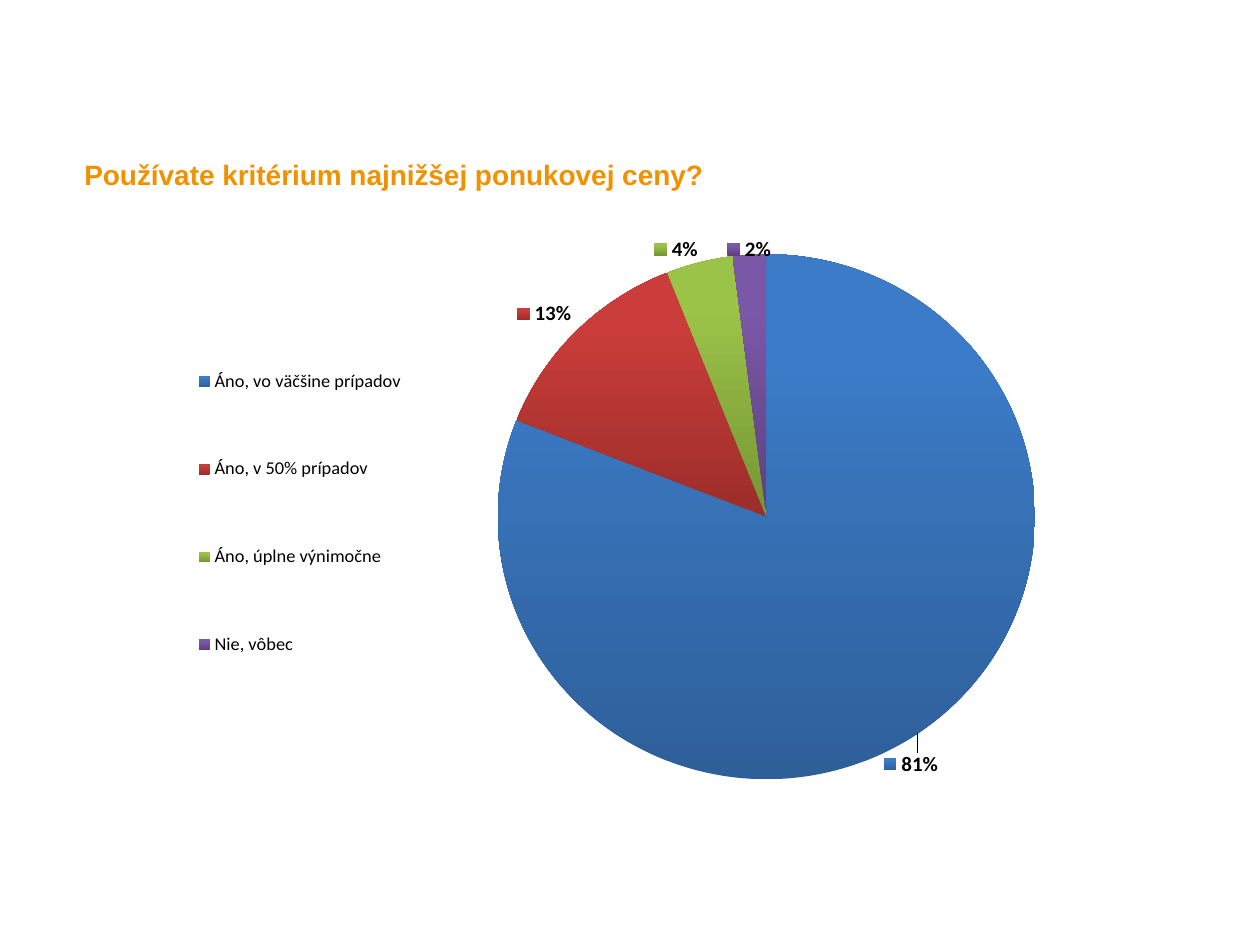
"""Build a slide with a pie chart on the use of the lowest-price criterion."""
from lxml import etree
from pptx import Presentation
from pptx.chart.data import CategoryChartData
from pptx.dml.color import RGBColor
from pptx.enum import chart as c, text
from pptx.oxml.ns import qn
from pptx.util import Inches, Pt

TITLE = "Používate kritérium najnižšej ponukovej ceny?"
ANSWERS = [
    ("Áno, vo väčšine prípadov", 81, "blue"),
    ("Áno, v 50% prípadov", 13, "red"),
    ("Áno, úplne výnimočne", 4, "green"),
    ("Nie, vôbec", 2, "purple"),
]
COLORS = {"title": "F09100", "text": "000000"}
GRADIENTS = {
    "blue": ("2E5F99", "3C7BC7"),
    "red": ("9B2D2A", "CB3D3A"),
    "green": ("769535", "9BC348"),
    "purple": ("5D417E", "7B57A8"),
}
PLOT_AREA = {"x": 0.42, "y": 0.013, "w": 0.57, "h": 0.886}
LEGEND_AREA = {"x": 0.07, "y": 0.11, "w": 0.28, "h": 0.68}
MAIN_LABEL_SHIFT = {"x": -0.04, "y": 0.02}


def set_layout(parent, after, area, modes=()):
    """Give a chart part a manual layout, placed after the named child if any."""
    for old in parent.findall(qn("c:layout")):
        parent.remove(old)
    layout = etree.Element(qn("c:layout"))
    manual = etree.SubElement(layout, qn("c:manualLayout"))
    for tag, val in [*modes, *area.items()]:
        etree.SubElement(manual, qn(f"c:{tag}")).set("val", str(val))
    parent.insert(0 if after is None else parent.index(parent.find(qn(after))) + 1, layout)


def add_title(s):
    """Add the question, resting on the bottom of its box."""
    tf = s.shapes.add_textbox(Inches(0.67), Inches(0.98), Inches(8.86), Inches(0.54)).text_frame
    tf.word_wrap = True
    tf.vertical_anchor = text.MSO_ANCHOR.BOTTOM
    tf.margin_left = tf.margin_right = tf.margin_top = tf.margin_bottom = 0
    p = tf.paragraphs[0]
    p.text = TITLE
    p.font.name, p.font.size, p.font.bold = "Arial", Pt(16), True
    p.font.color.rgb = RGBColor.from_string(COLORS["title"])


def add_labels(series):
    """Label each slice with its percentage and shift the label of the main slice."""
    labels = series.data_labels
    labels.show_value = False
    labels.show_percentage = True
    labels.show_legend_key = True
    labels.number_format, labels.number_format_is_linked = "0%", False
    labels.position = c.XL_LABEL_POSITION.OUTSIDE_END

    main_label = series.points[0].data_label
    main_label.position = c.XL_LABEL_POSITION.OUTSIDE_END
    for font in (labels.font, main_label.font):
        font.size, font.bold = Pt(12), True
    label_xml = labels._element.find(qn("c:dLbl"))
    for tag, val in (("showLegendKey", "1"), ("showVal", "0"), ("showPercent", "1")):
        label_xml.find(qn(f"c:{tag}")).set("val", val)
    set_layout(label_xml, "c:idx", MAIN_LABEL_SHIFT)


def add_pie(s):
    """Add the pie with its legend and percentage labels."""
    data = CategoryChartData()
    data.categories = [name for name, _, _ in ANSWERS]
    data.add_series("Series 1", [value for _, value, _ in ANSWERS])
    chart = s.shapes.add_chart(c.XL_CHART_TYPE.PIE, Inches(0.81), Inches(1.77),
                               Inches(7.48), Inches(4.98), data).chart
    chart.has_title = False
    chart.font.name, chart.font.size = "Calibri", Pt(10)
    chart.font.color.rgb = RGBColor.from_string(COLORS["text"])

    chart.has_legend = True
    legend = chart.legend
    legend.position = c.XL_LEGEND_POSITION.LEFT
    legend.include_in_layout = False
    legend.font.size = Pt(10.5)

    plot = chart.plots[0]
    plot.vary_by_categories = True
    series = plot.series[0]
    for i, (_, _, color) in enumerate(ANSWERS):
        fill = series.points[i].format.fill
        fill.gradient()
        fill.gradient_angle = 90
        for stop, shade, position in zip(fill.gradient_stops, GRADIENTS[color], (0, 0.8)):
            stop.color.rgb = RGBColor.from_string(shade)
            stop.position = position
    add_labels(series)

    chart_xml = chart.element.find(qn("c:chart"))
    edges = [("xMode", "edge"), ("yMode", "edge")]
    set_layout(chart_xml.find(qn("c:plotArea")), None, PLOT_AREA,
               [("layoutTarget", "inner"), *edges])
    set_layout(chart_xml.find(qn("c:legend")), "c:legendPos", LEGEND_AREA, edges)


def main():
    """Create the presentation and save it."""
    prs = Presentation()
    prs.slide_width, prs.slide_height = Inches(10), Inches(7.5)
    s = prs.slides.add_slide(prs.slide_layouts[6])
    add_title(s)
    add_pie(s)
    prs.save("out.pptx")


if __name__ == "__main__":
    main()
